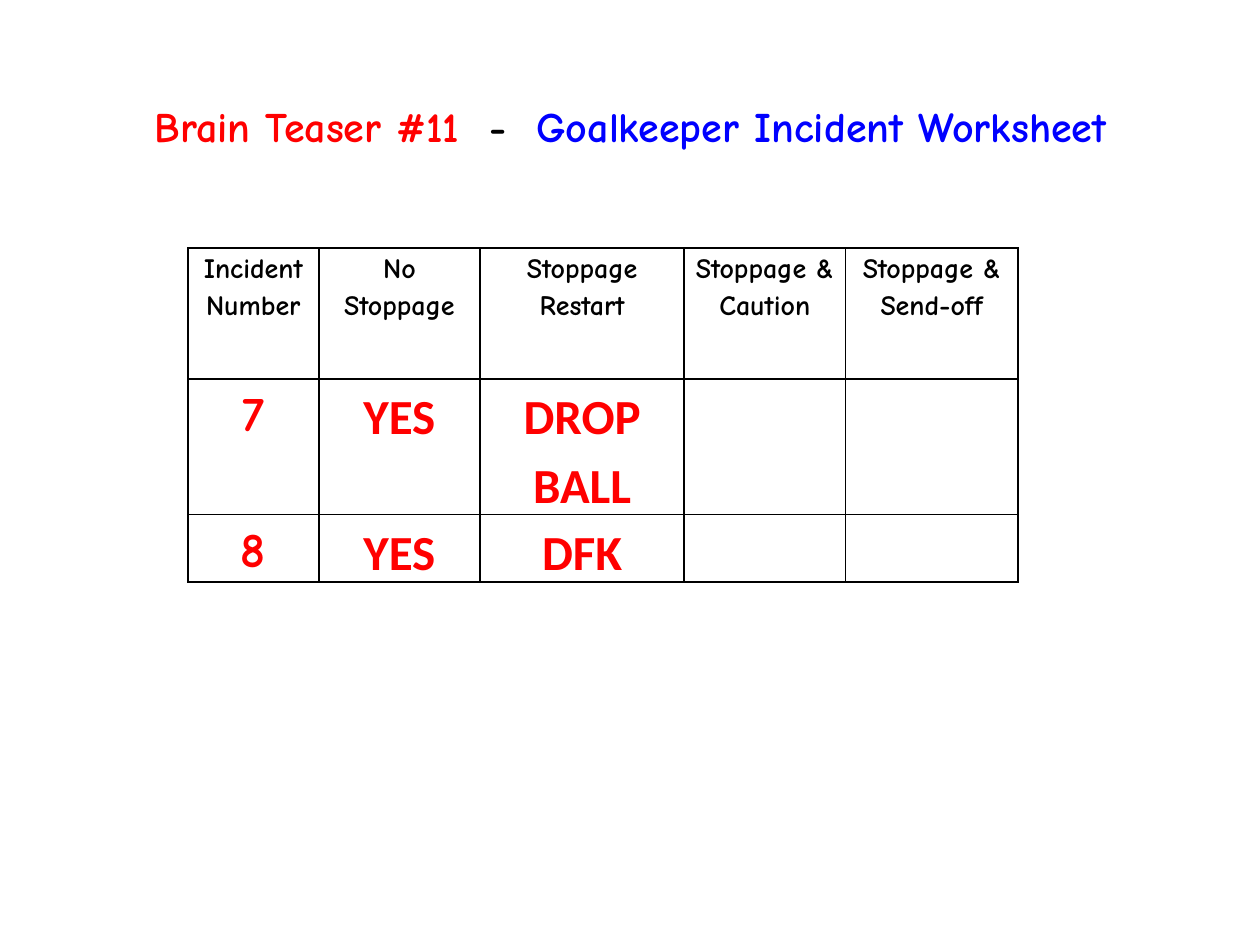
"""Build the goalkeeper incident worksheet slide."""
from lxml import etree
from pptx import Presentation, util as u
from pptx.dml.color import RGBColor
from pptx.enum import text
from pptx.oxml.ns import qn

COLORS = {"black": "000000", "red": "FF0000", "blue": "0000FF"}
HAND, PLAIN = "Comic Neue", "Calibri"
TITLE = [
    ("Brain Teaser #11  ", "red"),
    ("-  ", "black"),
    ("Goalkeeper Incident Worksheet", "blue"),
]
HEADERS = ["Incident Number", "No Stoppage", "Stoppage Restart",
           "Stoppage & Caution", "Stoppage & Send-off"]
INCIDENTS = [
    ["7", "YES", "DROP BALL", "", ""],
    ["8", "YES", "DFK", "", ""],
]
COLUMN_WIDTHS = [1.04, 1.28, 1.62, 1.28, 1.37]
ROW_HEIGHTS = [1.04, 0.52, 0.52]
TABLE_LEFT, TABLE_TOP = 1.49, 1.97


def add_span(para, words, size, color, font=HAND):
    span = para.add_run()
    span.text = words
    span.font.size = u.Pt(size)
    span.font.name = font
    span.font.bold = True
    span.font.color.rgb = RGBColor.from_string(COLORS[color])


def draw_borders(cell, color="black", width=1):
    properties = cell._tc.get_or_add_tcPr()
    for index, side in enumerate(("lnL", "lnR", "lnT", "lnB")):
        line = etree.Element(qn(f"a:{side}"), w=str(u.Pt(width)))
        fill = etree.SubElement(line, qn("a:solidFill"))
        etree.SubElement(fill, qn("a:srgbClr"), val=COLORS[color])
        properties.insert(index, line)


def fill_cell(cell, words, **style):
    cell.fill.background()
    cell.margin_left = cell.margin_right = u.Inches(0.07)
    cell.margin_top = cell.margin_bottom = 0
    draw_borders(cell)
    if words:
        para = cell.text_frame.paragraphs[0]
        para.alignment = text.PP_ALIGN.CENTER
        para.line_spacing = 1.15
        para.space_after = u.Pt(10)
        add_span(para, words, **style)


def add_title(page):
    box = page.shapes.title
    box.left, box.top, box.width, box.height = map(u.Inches, (0.45, 0.75, 9.11, 0.5))
    frame = box.text_frame
    frame.word_wrap = False
    frame.auto_size = text.MSO_AUTO_SIZE.SHAPE_TO_FIT_TEXT
    frame.vertical_anchor = text.MSO_ANCHOR.MIDDLE
    para = frame.paragraphs[0]
    para.alignment = text.PP_ALIGN.CENTER
    for words, color in TITLE:
        add_span(para, words, 24, color)


def add_worksheet(page):
    rows = [HEADERS] + INCIDENTS
    table = page.shapes.add_table(
        len(rows), len(HEADERS), u.Inches(TABLE_LEFT), u.Inches(TABLE_TOP),
        u.Inches(sum(COLUMN_WIDTHS)), u.Inches(sum(ROW_HEIGHTS))).table
    table.first_row = table.horz_banding = False
    for column, width in zip(table.columns, COLUMN_WIDTHS):
        column.width = u.Inches(width)
    for r, (row, height) in enumerate(zip(rows, ROW_HEIGHTS)):
        table.rows[r].height = u.Inches(height)
        for c, words in enumerate(row):
            if r == 0:
                style = {"size": 16, "color": "black"}
            else:
                style = {"size": 28, "color": "red", "font": PLAIN if c else HAND}
            fill_cell(table.cell(r, c), words, **style)


def main():
    deck = Presentation()
    deck.slide_width, deck.slide_height = u.Inches(10), u.Inches(7.5)
    page = deck.slides.add_slide(deck.slide_layouts[5])
    add_worksheet(page)
    add_title(page)
    deck.save("out.pptx")


if __name__ == "__main__":
    main()
